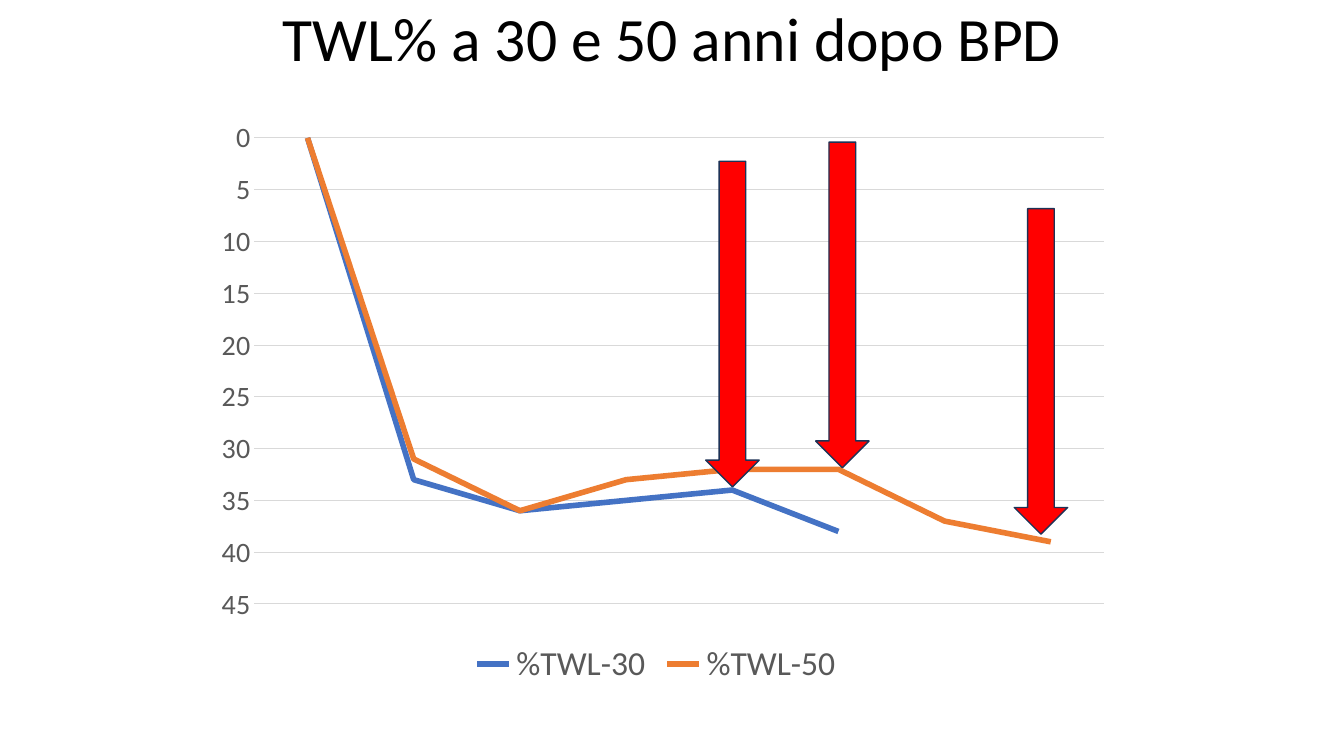
from dataclasses import dataclass

from lxml.etree import SubElement
from pptx import Presentation
from pptx.chart.chart import Chart
from pptx.chart.data import CategoryChartData
from pptx.dml.color import RGBColor as RGB
from pptx.enum.chart import XL_CHART_TYPE as ChartType
from pptx.enum.chart import XL_LEGEND_POSITION as LegendPosition
from pptx.enum.chart import XL_TICK_MARK as TickMark
from pptx.enum.shapes import MSO_SHAPE as Preset
from pptx.enum.text import MSO_ANCHOR as Anchor
from pptx.enum.text import PP_ALIGN as Align
from pptx.oxml.ns import qn
from pptx.slide import Slide
from pptx.util import Inches, Pt


@dataclass(frozen=True)
class Theme:
    font: str = "Calibri"
    title_size: int = 44
    legend_size: int = 24
    axis_size: int = 20
    ink: str = "000000"
    muted: str = "595959"
    grid: str = "D9D9D9"
    arrow_fill: str = "FF0000"
    arrow_line: str = "1E3256"


@dataclass(frozen=True)
class WeightLoss:
    name: str
    values: tuple[float | None, ...]
    color: str


@dataclass(frozen=True)
class Arrow:
    left: float
    top: float


THEME = Theme()
ARROW_WIDTH, ARROW_HEIGHT = 0.53, 3.23

COHORTS = (
    WeightLoss("%TWL-30", (0, 33, 36, 35, 34, 38, None, None), "4472C4"),
    WeightLoss("%TWL-50", (0, 31, 36, 33, 32, 32, 37, 39), "ED7D31"),
)
ARROWS = (Arrow(7, 1.6), Arrow(8.09, 1.41), Arrow(10.06, 2.07))


def style_font(font, size: int, color: str) -> None:
    font.name = THEME.font
    font.size = Pt(size)
    font.color.rgb = RGB.from_string(color)


def add_text(slide: Slide, text: str, *, left: float, top: float, width: float,
             height: float, size: int, color: str, align: Align) -> None:
    box = slide.shapes.add_textbox(*map(Inches, (left, top, width, height)))
    frame = box.text_frame
    frame.word_wrap = True
    frame.vertical_anchor = Anchor.TOP
    paragraph = frame.paragraphs[0]
    paragraph.alignment = align
    paragraph.line_spacing = 0.9
    run = paragraph.add_run()
    run.text = text
    style_font(run.font, size, color)


def place_plot(chart: Chart, x: float, y: float, w: float, h: float) -> None:
    """Fix the inner plot area, in fractions of the chart frame."""
    plot_area = chart.plots[0]._element.getparent()
    layout = plot_area.find(qn("c:layout"))
    if layout is None:
        layout = SubElement(plot_area, qn("c:layout"))
        plot_area.insert(0, layout)
    manual = SubElement(layout, qn("c:manualLayout"))
    settings = {"layoutTarget": "inner", "xMode": "edge", "yMode": "edge",
                "x": x, "y": y, "w": w, "h": h}
    for tag, value in settings.items():
        SubElement(manual, qn(f"c:{tag}")).set("val", str(value))


def add_weight_chart(slide: Slide, cohorts: tuple[WeightLoss, ...]) -> None:
    data = CategoryChartData(number_format="0.0")
    data.categories = [str(n + 1) for n in range(len(cohorts[0].values))]
    for cohort in cohorts:
        data.add_series(cohort.name, cohort.values)
    chart = slide.shapes.add_chart(
        ChartType.LINE, *map(Inches, (1.98, 1.08, 9.06, 5.78)), data).chart
    chart.has_title = False
    style_font(chart.font, THEME.axis_size, THEME.muted)
    place_plot(chart, 0.06, 0.05, 0.93, 0.8)

    # Lines
    plot = chart.plots[0]
    plot.vary_by_categories = False
    for series, cohort in zip(plot.series, cohorts):
        series.smooth = False
        series.format.line.color.rgb = RGB.from_string(cohort.color)
        series.format.line.width = Pt(4)

    # Axes: loss grows downwards
    chart.category_axis.visible = False
    axis = chart.value_axis
    axis.reverse_order = True
    axis.minimum_scale, axis.maximum_scale, axis.major_unit = 0, 45, 5
    axis.major_tick_mark = axis.minor_tick_mark = TickMark.NONE
    axis.format.line.fill.background()
    axis.major_gridlines.format.line.color.rgb = RGB.from_string(THEME.grid)
    axis.major_gridlines.format.line.width = Pt(0.75)
    axis.tick_labels.number_format = "0"
    axis.tick_labels.number_format_is_linked = False
    style_font(axis.tick_labels.font, THEME.axis_size, THEME.muted)

    # Legend
    chart.has_legend = True
    chart.legend.position = LegendPosition.BOTTOM
    chart.legend.include_in_layout = False
    style_font(chart.legend.font, THEME.legend_size, THEME.muted)


def add_arrow(slide: Slide, arrow: Arrow) -> None:
    marker = slide.shapes.add_shape(
        Preset.DOWN_ARROW,
        *map(Inches, (arrow.left, arrow.top, ARROW_WIDTH, ARROW_HEIGHT)))
    marker.shadow.inherit = False
    marker.fill.solid()
    marker.fill.fore_color.rgb = RGB.from_string(THEME.arrow_fill)
    marker.line.color.rgb = RGB.from_string(THEME.arrow_line)
    marker.line.width = Pt(1)


def main() -> None:
    deck = Presentation()
    deck.slide_width, deck.slide_height = Inches(13.33), Inches(7.5)
    slide = deck.slides.add_slide(deck.slide_layouts[6])

    add_weight_chart(slide, COHORTS)
    add_text(slide, "TWL% a 30 e 50 anni dopo BPD", left=0.92, top=0.03,
             width=11.5, height=1.45, size=THEME.title_size, color=THEME.ink,
             align=Align.CENTER)
    for arrow in ARROWS:
        add_arrow(slide, arrow)

    deck.save("out.pptx")


if __name__ == "__main__":
    main()
